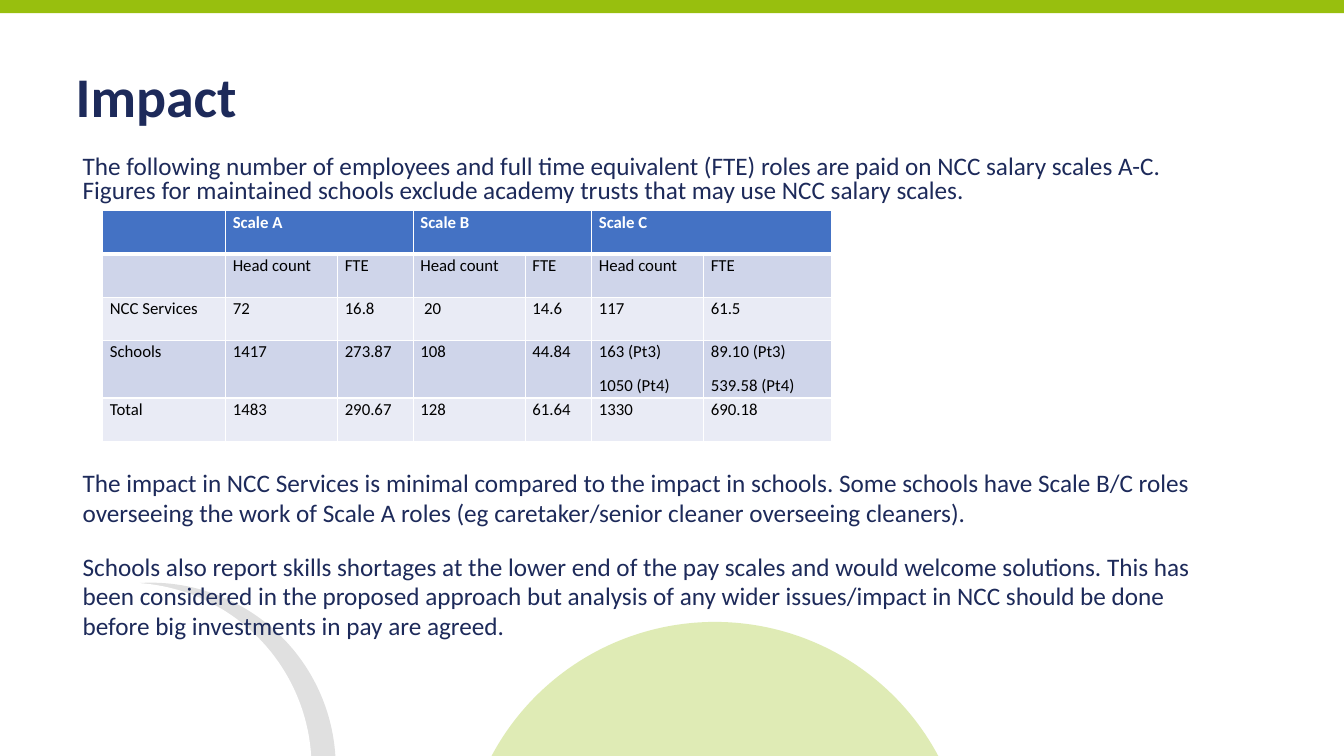
import pptx
import pptx.dml.color
import pptx.enum.shapes
import pptx.enum.text
import pptx.oxml
import pptx.oxml.ns
import pptx.util
from dataclasses import dataclass

# Content
TITLE = "Impact"
INTRO = ("The following number of employees and full time equivalent (FTE) roles are paid on "
         "NCC salary scales A-C. Figures for maintained schools exclude academy trusts that may "
         "use NCC salary scales.")
FINDINGS = [
    "The impact in NCC Services is minimal compared to the impact in schools. Some schools have "
    "Scale B/C roles overseeing the work of Scale A roles (eg caretaker/senior cleaner "
    "overseeing cleaners).",
    "Schools also report skills shortages at the lower end of the pay scales and would welcome "
    "solutions. This has been considered in the proposed approach but analysis of any wider "
    "issues/impact in NCC should be done before big investments in pay are agreed.",
]
SCALES = ["Scale A", "Scale B", "Scale C"]
ROWS = [
    [""] + ["Head count", "FTE"] * len(SCALES),
    ["NCC Services", "72", "16.8", " 20", "14.6", "117", "61.5"],
    ["Schools", "1417", "273.87", "108", "44.84", "163 (Pt3)\n1050 (Pt4)",
     "89.10 (Pt3)\n539.58 (Pt4)"],
    ["Total", "1483", "290.67", "128", "61.64", "1330", "690.18"],
]


@dataclass(frozen=True)
class Theme:
    font: str = "Calibri"
    navy: str = "1D2A5A"
    green: str = "98BF0E"
    circle_green: str = "97BF0D"
    white: str = "FFFFFF"
    black: str = "000000"
    header: str = "4472C4"
    bands: tuple = ("CFD5EA", "E9EBF5")
    title_size: int = 40
    body_size: int = 18
    table_size: int = 12


THEME = Theme()

# Places: left, top, width, height in percent of the slide
TITLE_AT = (4.88, 8.53, 84.62, 9.6)
BODY_AT = (5.4, 20, 85.6, 72.4)
TABLE_CORNER = (7.65, 27.87)
COLUMN_SHARES = [9.15, 8.33, 5.63, 8.33, 4.95, 8.33, 9.53]
ROW_SHARES = [5.73, 5.73, 5.73, 7.6, 5.73]
OVAL = pptx.enum.shapes.MSO_SHAPE.OVAL
DECOR = [  # shape, place, colour, opacity in percent
    (OVAL, (-2.55, 77.07, 27.53, 48.93), THEME.black, 12),
    (OVAL, (-4.35, 77.07, 27.53, 48.93), THEME.white, 100),
    (OVAL, (34.36, 82.27, 37.66, 66.93), THEME.circle_green, 30),
    (pptx.enum.shapes.MSO_SHAPE.RECTANGLE, (0, 0, 100, 1.73), THEME.green, 100),
]
TABLE_GAP = 189  # points between the introduction and the findings
FINDING_GAP = 18

deck = pptx.Presentation()
deck.slide_width = pptx.util.Inches(13.33)
deck.slide_height = pptx.util.Inches(7.5)


def across(share):
    return round(deck.slide_width * share / 100)


def down(share):
    return round(deck.slide_height * share / 100)


def place(at):
    left, top, width, height = at
    return across(left), down(top), across(width), down(height)


def rgb(code):
    return pptx.dml.color.RGBColor.from_string(code)


def xml(tag, content="", **attributes):
    listed = "".join(f' {name}="{value}"' for name, value in attributes.items())
    return pptx.oxml.parse_xml(
        f'<a:{tag} {pptx.oxml.ns.nsdecls("a")}{listed}>{content}</a:{tag}>')


def write(frame, text, size, color, bold=False, line=1.0, before=0, after=0, new=False):
    """Write each line of text as a paragraph; new adds after those already there."""
    for index, words in enumerate(text.split("\n")):
        para = frame.add_paragraph() if new or index else frame.paragraphs[0]
        properties = para._p.get_or_add_pPr()
        properties.set("marL", "0")
        properties.set("indent", "0")
        properties.append(xml("buNone"))
        para.line_spacing = line
        para.space_before = pptx.util.Pt(before)
        para.space_after = pptx.util.Pt(after)
        para.alignment = pptx.enum.text.PP_ALIGN.LEFT
        para.font.size = pptx.util.Pt(size)
        if words:
            span = para.add_run()
            span.text = words
            span.font.name = THEME.font
            span.font.size = pptx.util.Pt(size)
            span.font.bold = bold
            span.font.color.rgb = rgb(color)


def add_decor(page, kind, at, color, opacity):
    shape = page.shapes.add_shape(kind, *place(at))
    shape.shadow.inherit = False
    shape.line.fill.background()
    shape.fill.solid()
    shape.fill.fore_color.rgb = rgb(color)
    if opacity < 100:
        fill_color = shape._element.spPr.find(".//" + pptx.oxml.ns.qn("a:srgbClr"))
        fill_color.append(xml("alpha", val=opacity * 1000))


def prepare(page, box, at):
    """Move a placeholder into place, in front of the decoration."""
    box.left, box.top, box.width, box.height = place(at)
    page.shapes._spTree.append(box._element)
    frame = box.text_frame
    frame.word_wrap = True
    frame.auto_size = pptx.enum.text.MSO_AUTO_SIZE.NONE
    frame.vertical_anchor = pptx.enum.text.MSO_ANCHOR.TOP
    return frame


def format_cell(cell, text, fill, color, bold, top, bottom):
    cell.margin_left = cell.margin_right = pptx.util.Inches(0.07)
    cell.margin_top = cell.margin_bottom = 0
    write(cell.text_frame, text, THEME.table_size, color, bold=bold, line=1.07, after=8)
    cell.fill.solid()
    cell.fill.fore_color.rgb = rgb(fill)
    edges = {"lnL": 1, "lnR": 1, "lnT": top, "lnB": bottom}
    paint = f'<a:solidFill><a:srgbClr val="{THEME.white}"/></a:solidFill>'
    for position, (tag, points) in enumerate(edges.items()):
        cell._tc.get_or_add_tcPr().insert(position, xml(tag, paint, w=pptx.util.Pt(points)))


def add_salary_table(page):
    header = [""] + [words for scale in SCALES for words in (scale, "")]
    grid = [header] + ROWS
    left, top = TABLE_CORNER
    table = page.shapes.add_table(
        len(grid), len(header),
        *place((left, top, sum(COLUMN_SHARES), sum(ROW_SHARES)))).table
    table.horz_banding = False
    for column, share in zip(table.columns, COLUMN_SHARES):
        column.width = across(share)
    for row, share in zip(table.rows, ROW_SHARES):
        row.height = down(share)
    for number, texts in enumerate(grid):
        is_header = number == 0
        fill = THEME.header if is_header else THEME.bands[(number - 1) % 2]
        for index, text in enumerate(texts):
            format_cell(table.cell(number, index), text, fill,
                        THEME.white if is_header else THEME.black, is_header,
                        top=3 if number == 1 else 1, bottom=3 if is_header else 1)
    for index in range(1, len(header), 2):
        table.cell(0, index).merge(table.cell(0, index + 1))


# Page
page = deck.slides.add_slide(deck.slide_layouts[1])
for part in DECOR:
    add_decor(page, *part)

# Title and text
title = prepare(page, page.shapes.title, TITLE_AT)
write(title, TITLE, THEME.title_size, THEME.navy, bold=True, line=0.9)
body = prepare(page, page.placeholders[1], BODY_AT)
write(body, INTRO, THEME.body_size, THEME.navy, line=0.8)
for finding, gap in zip(FINDINGS, (TABLE_GAP, FINDING_GAP)):
    write(body, finding, THEME.body_size, THEME.navy, line=0.97, before=gap, new=True)

# Table
add_salary_table(page)

deck.save("out.pptx")
